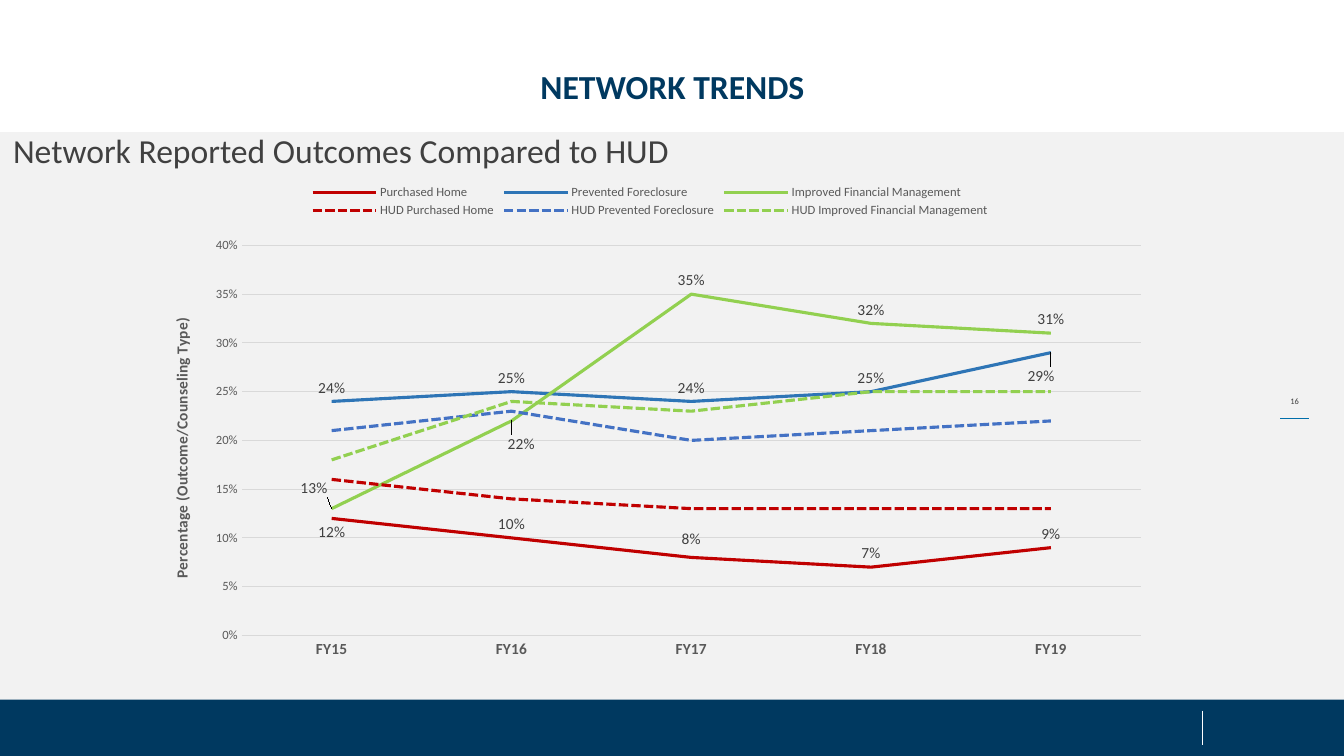
from dataclasses import dataclass

from lxml import etree
from pptx import Presentation
from pptx.chart import data as cd
from pptx.dml.color import RGBColor
from pptx.enum import chart as ch, dml, shapes, text
from pptx.oxml import ns
from pptx.util import Inches, Pt

TITLE = "NETWORK TRENDS"
SUBTITLE = "Network Reported Outcomes Compared to HUD"
PAGE = "16"
AXIS_TITLE = "Percentage (Outcome/Counseling Type)"
YEARS = ["FY15", "FY16", "FY17", "FY18", "FY19"]
# name, values, colour key, is a HUD benchmark (dashed, unlabelled)
SERIES = [
    ("Purchased Home", (.12, .10, .08, .07, .09), "red", False),
    ("Prevented Foreclosure", (.24, .25, .24, .25, .29), "blue", False),
    ("Improved Financial Management", (.13, .22, .35, .32, .31), "green", False),
    ("HUD Purchased Home", (.16, .14, .13, .13, .13), "red", True),
    ("HUD Prevented Foreclosure", (.21, .23, .20, .21, .22), "hud_blue", True),
    ("HUD Improved Financial Management", (.18, .24, .23, .25, .25), "green", True),
]
POS = ch.XL_LABEL_POSITION
# (series, year index): label side and nudge as a share of the chart
MOVED_LABELS = {
    (0, 0): (POS.BELOW, 0, 0),
    (0, 2): (POS.ABOVE, 0, -.01),
    (1, 4): (POS.BELOW, -.01, .02),
    (2, 0): (POS.LEFT, 0, -.04),
    (2, 1): (POS.BELOW, .01, .02),
}


@dataclass(frozen=True)
class Theme:
    font: str = "Calibri"
    navy: str = "003960"
    panel: str = "F2F2F2"
    ink: str = "404040"
    axis: str = "595959"
    grid: str = "D9D9D9"
    accent: str = "006EAA"
    white: str = "FFFFFF"
    red: str = "C00000"
    blue: str = "2E75B6"
    green: str = "92D050"
    hud_blue: str = "4472C4"
    heading: int = 24
    label: int = 11
    small: int = 9
    page: int = 6


T = Theme()


def rgb(value):
    return RGBColor.from_string(value)


def style(font, size, color, bold=False):
    font.name, font.size, font.bold = T.font, Pt(size), bold
    font.color.rgb = rgb(color)


def stroke(line, color, width):
    line.color.rgb = rgb(color)
    line.width = Pt(width)


def add_band(s, top, height, color):
    sp = s.shapes.add_shape(shapes.MSO_SHAPE.RECTANGLE, 0, Inches(top),
                            Inches(13.33), Inches(height))
    sp.shadow.inherit = False
    sp.fill.solid()
    sp.fill.fore_color.rgb = rgb(color)
    sp.line.fill.background()


def add_rule(s, x1, y1, x2, y2, color, width):
    c = s.shapes.add_connector(shapes.MSO_CONNECTOR.STRAIGHT,
                               *map(Inches, (x1, y1, x2, y2)))
    stroke(c.line, color, width)
    etree.SubElement(c._element.spPr, ns.qn("a:effectLst"))


def write(sp, box, words, size, color, bold=False,
          align=text.PP_ALIGN.LEFT, pad=0, spacing=.9):
    sp.left, sp.top, sp.width, sp.height = map(Inches, box)
    tf = sp.text_frame
    tf.text = words
    tf.word_wrap = True
    tf.auto_size = text.MSO_AUTO_SIZE.NONE
    tf.vertical_anchor = text.MSO_ANCHOR.TOP
    tf.margin_left = tf.margin_right = 0
    tf.margin_top = tf.margin_bottom = Inches(pad)
    p = tf.paragraphs[0]
    p.alignment, p.line_spacing = align, spacing
    style(p.runs[0].font, size, color, bold)


def set_layout(parent, index, target=None, **numbers):
    """Give a chart part a manual layout, as shares of the chart."""
    for old in parent.findall(ns.qn("c:layout")):
        parent.remove(old)
    layout = etree.Element(ns.qn("c:layout"))
    manual = etree.SubElement(layout, ns.qn("c:manualLayout"))
    entries = {"layoutTarget": target} if target else {}
    if target or "w" in numbers:
        entries.update(xMode="edge", yMode="edge")
    for tag, val in {**entries, **numbers}.items():
        etree.SubElement(manual, ns.qn("c:" + tag)).set("val", str(val))
    parent.insert(index, layout)


def format_axes(chart):
    cat, val = chart.category_axis, chart.value_axis
    for axis in (cat, val):
        axis.major_tick_mark = axis.minor_tick_mark = ch.XL_TICK_MARK.NONE
    style(cat.tick_labels.font, T.label, T.axis, True)
    stroke(cat.format.line, T.grid, .75)

    val.minimum_scale, val.maximum_scale, val.major_unit = 0, .4, .05
    val.tick_labels.number_format = "0%"
    val.tick_labels.number_format_is_linked = False
    style(val.tick_labels.font, T.small, T.axis)
    val.format.line.fill.background()
    stroke(val.major_gridlines.format.line, T.grid, .75)
    tf = val.axis_title.text_frame
    tf.text = AXIS_TITLE
    style(tf.paragraphs[0].runs[0].font, T.label, T.axis, True)


def format_series(chart):
    for ser, (_, _, color, is_hud) in zip(chart.plots[0].series, SERIES):
        ser.smooth = False
        ser.marker.style = ch.XL_MARKER_STYLE.NONE
        stroke(ser.format.line, getattr(T, color), 2.25)
        if is_hud:
            ser.format.line.dash_style = dml.MSO_LINE.SQUARE_DOT
            continue
        labels = ser.data_labels
        labels.show_value = True
        labels.number_format = "0%"
        labels.number_format_is_linked = False
        labels.position = POS.ABOVE
        style(labels.font, T.label, T.ink)


def move_labels(chart):
    for (i, year), (side, dx, dy) in MOVED_LABELS.items():
        ser = chart.plots[0].series[i]
        label = ser.points[year].data_label
        style(label.font, T.label, T.ink)
        label.position = side
        if dx or dy:
            dlbl = ser._element.xpath(f"c:dLbls/c:dLbl[c:idx/@val='{year}']")[0]
            set_layout(dlbl, 1, x=dx, y=dy)


def add_trend_chart(s):
    data = cd.CategoryChartData(number_format="0%")
    data.categories = YEARS
    for name, values, *_ in SERIES:
        data.add_series(name, values)
    chart = s.shapes.add_chart(ch.XL_CHART_TYPE.LINE,
                               *map(Inches, (1.58, 1.7, 9.74, 5)), data).chart
    style(chart.font, 10, "000000")
    chart.has_title = False
    chart.plots[0].vary_by_categories = False
    chart.has_legend = True
    chart.legend.position = ch.XL_LEGEND_POSITION.TOP
    chart.legend.include_in_layout = False
    style(chart.legend.font, T.small, T.axis)
    set_layout(chart.legend._element, 1, x=.15, y=.02, w=.7, h=.08)
    set_layout(chart._chartSpace.chart.plotArea, 0, "inner",
               x=.084, y=.147, w=.916, h=.774)
    format_axes(chart)
    format_series(chart)
    move_labels(chart)


def main():
    prs = Presentation()
    prs.slide_width, prs.slide_height = Inches(13.33), Inches(7.5)
    s = prs.slides.add_slide(prs.slide_layouts[5])
    center = text.PP_ALIGN.CENTER
    add_band(s, 1.31, 6.18, T.panel)
    add_band(s, 6.94, .56, T.navy)
    write(s.shapes.add_textbox(0, 0, 0, 0), (12.7, 3.88, .28, .27), PAGE,
          T.page, T.ink, align=center, pad=.05, spacing=1)
    add_rule(s, 12.7, 4.15, 12.98, 4.15, T.accent, .25)
    add_rule(s, 11.93, 7.05, 11.93, 7.39, T.white, .5)
    write(s.shapes.title, (.92, .7, 11.5, .5), TITLE, T.heading, T.navy,
          bold=True, align=center)
    write(s.shapes.add_textbox(0, 0, 0, 0), (.13, 1.33, 11.47, .4), SUBTITLE,
          T.heading, T.ink)
    add_trend_chart(s)
    prs.save("out.pptx")


if __name__ == "__main__":
    main()
